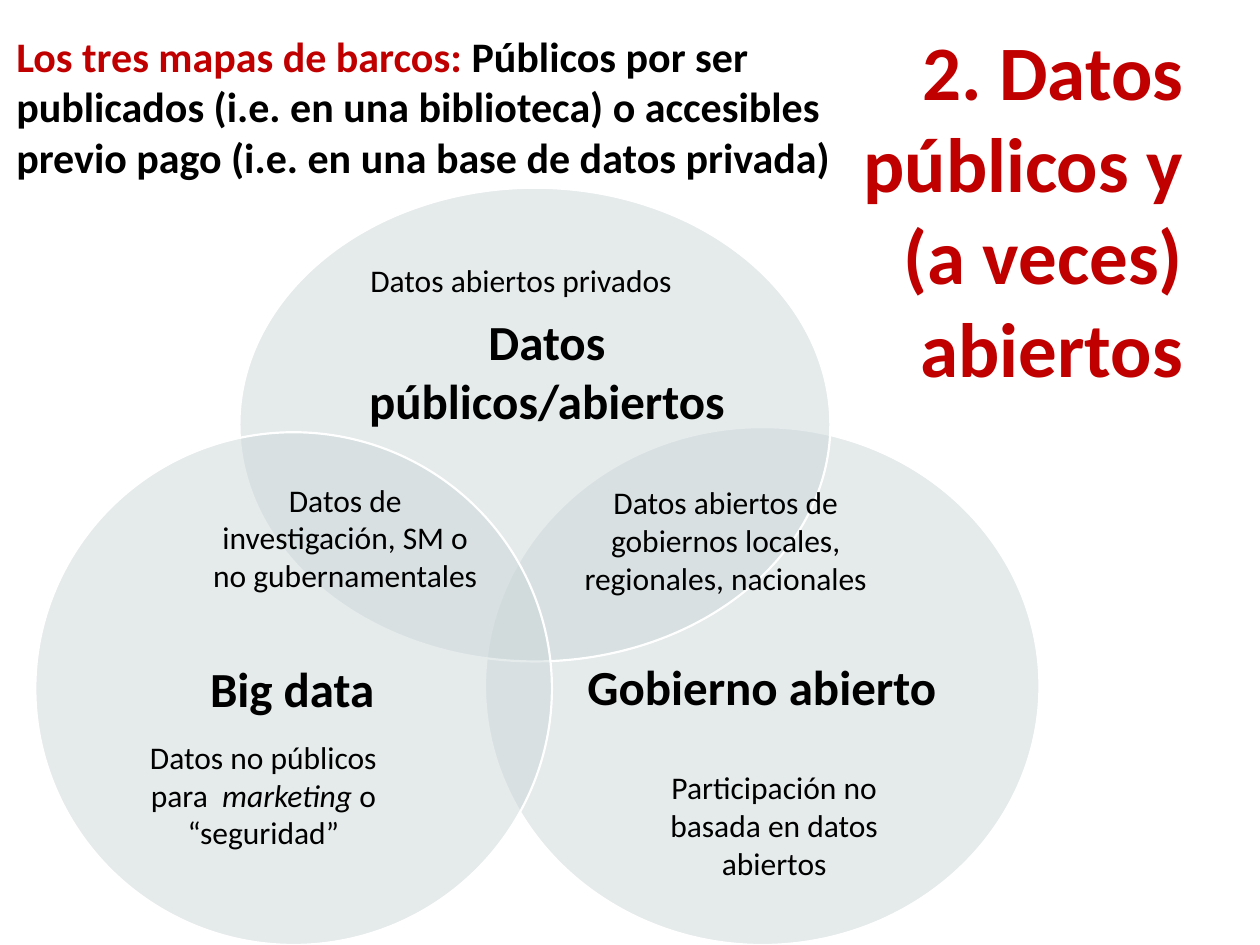
from lxml.etree import SubElement
from pptx import Presentation
from pptx.dml.color import RGBColor
from pptx.enum.shapes import MSO_SHAPE
from pptx.enum.text import MSO_ANCHOR, PP_ALIGN
from pptx.oxml.ns import qn
from pptx.util import Pt

RED = RGBColor(0xC0, 0x00, 0x00)
BLACK = RGBColor(0x00, 0x00, 0x00)
WHITE = RGBColor(0xFF, 0xFF, 0xFF)
MIST = RGBColor(0xCC, 0xD7, 0xD9)

# Frames are left, top, width, height in points
CIRCLES = [
    (277.2, 244.1, 316.8, 295.9),  # Gobierno abierto
    (136.8, 107.3, 337.7, 270.7),  # Datos públicos/abiertos
    (20.2, 247, 295.2, 293),       # Big data
]

# Text formats
LEAD = {"size": Pt(24), "bold": True, "color": BLACK}
LEAD_RED = LEAD | {"color": RED}
TITLE = {"size": Pt(44), "bold": True, "color": RED}
SET_NAME = {"size": Pt(28), "bold": True, "color": BLACK}
NOTE = {"size": Pt(18), "bold": False, "color": BLACK}
NOTE_ITALIC = NOTE | {"italic": True}

# Headings: frame, alignment, bottom margin, spans
HEADINGS = [
    ((2.2, 9.4, 483.1, 102.2), PP_ALIGN.LEFT, 3.6, [
        ("Los tres mapas de barcos: ", LEAD_RED),
        ("Públicos por ser publicados (i.e. en una biblioteca) o accesibles "
         "previo pago (i.e. en una base de datos privada)", LEAD)]),
    ((450.7, 9.4, 232.6, 272.2), PP_ALIGN.RIGHT, 57, [
        ("2. Datos públicos y (a veces) abiertos", TITLE)]),
]

# Labels on the diagram: frame, spans
LABELS = [
    ((323.3, 287.3, 223.9, 209.5), [("Gobierno abierto", SET_NAME)]),
    ((62.6, 289.4, 208.8, 207.4), [("Big data", SET_NAME)]),
    ((176.4, 174.2, 272.2, 74.9), [("Datos públicos/abiertos", SET_NAME)]),
    ((72, 417.6, 157, 72.7), [
        ("Datos no públicos para  ", NOTE), ("marketing", NOTE_ITALIC),
        (" o “seguridad”", NOTE)]),
    ((190.1, 145.4, 215.3, 28.8), [("Datos abiertos privados", NOTE)]),
    ((110.9, 270.7, 172.8, 72.7), [
        ("Datos de investigación, SM o no gubernamentales", NOTE)]),
    ((371.5, 434.9, 141.8, 72.7), [
        ("Participación no basada en datos abiertos", NOTE)]),
    ((321.1, 272.2, 187.2, 72.7), [
        ("Datos abiertos de gobiernos locales, regionales, nacionales", NOTE)]),
]


def add_circle(page, frame):
    circle = page.shapes.add_shape(MSO_SHAPE.OVAL, *map(Pt, frame))
    circle.shadow.inherit = False
    circle.fill.solid()
    circle.fill.fore_color.rgb = MIST
    circle.line.color.rgb = WHITE
    circle.line.width = Pt(1.25)
    # Half-transparent fill, so that overlaps show darker
    color = circle.fill._xPr.find(qn("a:solidFill"))[0]
    SubElement(color, qn("a:alpha"), val="50000")


def add_text(page, frame, spans, align=PP_ALIGN.CENTER, bottom=3.6):
    box = page.shapes.add_textbox(*map(Pt, frame))
    text = box.text_frame
    text.word_wrap = True
    text.vertical_anchor = MSO_ANCHOR.MIDDLE
    text.margin_bottom = Pt(bottom)
    para = text.paragraphs[0]
    para.alignment = align
    for words, look in spans:
        span = para.add_run()
        span.text = words
        span.font.name = "Calibri"
        for key, value in look.items():
            if key == "color":
                span.font.color.rgb = value
            else:
                setattr(span.font, key, value)


def main():
    deck = Presentation()
    deck.slide_width, deck.slide_height = Pt(720), Pt(540)
    page = deck.slides.add_slide(deck.slide_layouts[6])

    # Lead sentence and title
    for frame, align, bottom, spans in HEADINGS:
        add_text(page, frame, spans, align, bottom)

    # Venn diagram
    for frame in CIRCLES:
        add_circle(page, frame)
    for frame, spans in LABELS:
        add_text(page, frame, spans)

    deck.save("out.pptx")


if __name__ == "__main__":
    main()
